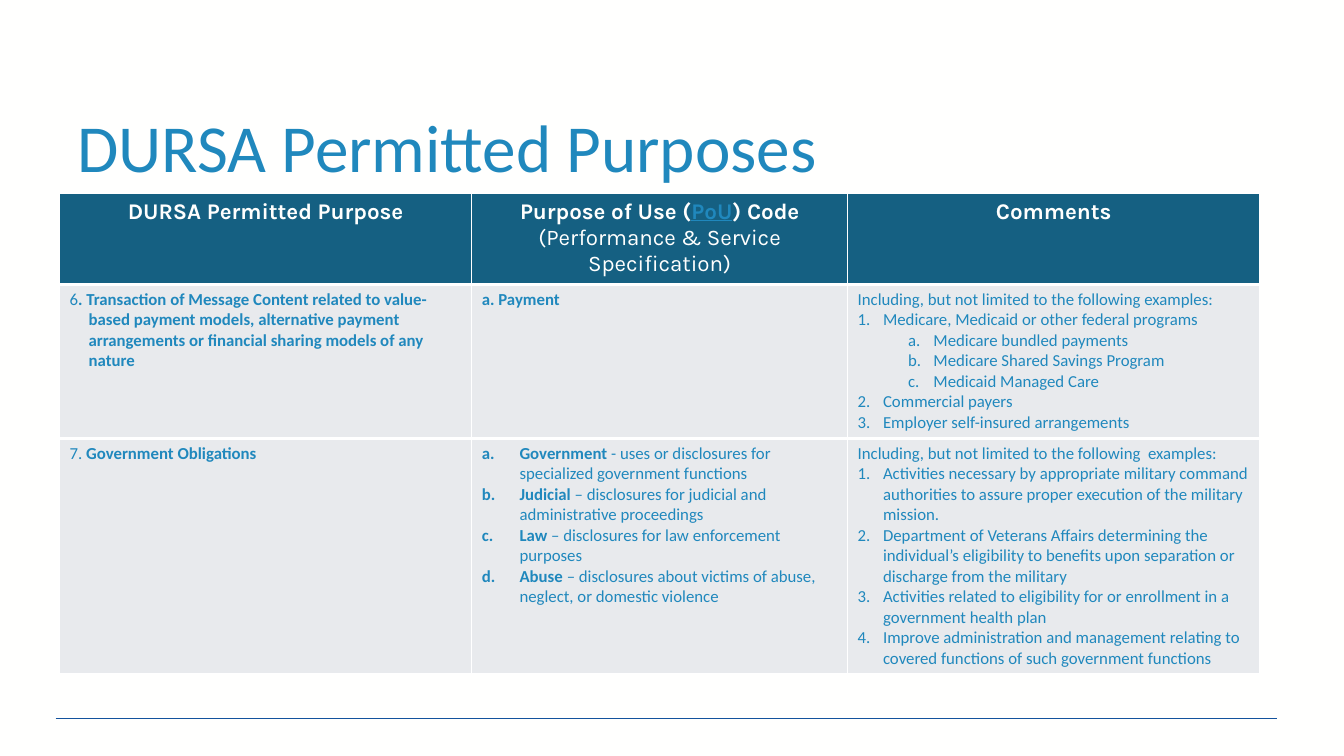
from lxml.etree import SubElement
from pptx import Presentation
from pptx.dml.color import RGBColor
from pptx.enum.shapes import MSO_CONNECTOR
from pptx.enum.text import MSO_ANCHOR, PP_ALIGN
from pptx.oxml.ns import qn
from pptx.util import Cm, Pt

BACKGROUND = RGBColor(0xFF, 0xFF, 0xFE)
BLUE = RGBColor(0x20, 0x88, 0xBD)
RULE_BLUE = RGBColor(0x13, 0x52, 0x9D)
HEADER_FILL = RGBColor(0x15, 0x60, 0x82)
BODY_FILL = RGBColor(0xE8, 0xEA, 0xED)
BORDER = RGBColor(0xFF, 0xFF, 0xFF)

COL_WIDTHS = [10.39, 9.47, 10.39]
ROW_HEIGHTS = [2.2, 3.88, 5.92]

# Paragraph styles: left margin and hanging indent in cm, level, numbering
STYLES = {
    "plain": (0, 0, 0, None),
    "hanging": (0.48, 0.48, 0, None),
    "number": (0.64, 0.64, 0, "arabicPeriod"),
    "letter": (1.91, 0.64, 1, "alphaLcPeriod"),
    "code": (0.95, 0.95, 0, "alphaLcPeriod"),
}

# Header cells: runs of (text, bold, colour, underlined)
HEADERS = [
    [("DURSA Permitted Purpose", True, BACKGROUND, False)],
    [("Purpose of Use (", True, BACKGROUND, False),
     ("PoU", True, BLUE, True),
     (") Code ", True, BACKGROUND, False),
     ("(Performance & Service Specification)", False, BACKGROUND, False)],
    [("Comments", True, BACKGROUND, False)],
]

# Body cells: paragraphs of (style, [(text, bold), ...])
BODY = [
    [
        [("hanging", [("6", False),
                      (". Transaction of Message Content related to value-based payment "
                       "models, alternative payment arrangements or financial sharing "
                       "models of any nature", True)])],
        [("plain", [("a. Payment", True)])],
        [("plain", [("Including, but not limited to the following examples:", False)]),
         ("number", [("Medicare, Medicaid or other federal programs", False)]),
         ("letter", [("Medicare bundled payments", False)]),
         ("letter", [("Medicare Shared Savings Program", False)]),
         ("letter", [("Medicaid Managed Care", False)]),
         ("number", [("Commercial payers", False)]),
         ("number", [("Employer self-insured arrangements", False)])],
    ],
    [
        [("plain", [("7. ", False), ("Government Obligations", True)])],
        [("code", [("Government", True),
                   (" - uses or disclosures for specialized government functions", False)]),
         ("code", [("Judicial ", True),
                   ("– disclosures for judicial and administrative proceedings", False)]),
         ("code", [("Law ", True),
                   ("– disclosures for law enforcement purposes", False)]),
         ("code", [("Abuse ", True),
                   ("– disclosures about victims of abuse, neglect, or domestic violence",
                    False)])],
        [("plain", [("Including, but not limited to the following  examples:", False)]),
         ("number", [("Activities necessary by appropriate military command authorities "
                      "to assure proper execution of the military mission.", False)]),
         ("number", [("Department of Veterans Affairs determining the individual’s "
                      "eligibility to benefits upon separation or discharge from the "
                      "military", False)]),
         ("number", [("Activities related to eligibility for or enrollment in a "
                      "government health plan", False)]),
         ("number", [("Improve administration and management relating to covered "
                      "functions of such government functions", False)])],
    ],
]


def add_run(p, text, font, size, color, bold=False, underline=False):
    r = p.add_run()
    r.text = text
    r.font.name = font
    r.font.size = Pt(size)
    r.font.bold = bold
    r.font.underline = underline
    r.font.color.rgb = color


def set_style(p, style):
    """Apply margin, hanging indent, level and numbering to a paragraph."""
    margin, hang, level, numbering = STYLES[style]
    p.level = level
    pPr = p._p.get_or_add_pPr()
    pPr.set("marL", str(Cm(margin)))
    pPr.set("indent", str(-Cm(hang)))
    if numbering:
        SubElement(pPr, qn("a:buFont"), typeface="+mj-lt")
        SubElement(pPr, qn("a:buAutoNum"), type=numbering)


def format_cell(cell, fill, top, bottom):
    """Set the cell fill and white borders; top and bottom are widths in points."""
    tcPr = cell._tc.get_or_add_tcPr()
    for tag, width in (("lnL", 1), ("lnR", 1), ("lnT", top), ("lnB", bottom)):
        ln = SubElement(tcPr, qn(f"a:{tag}"), w=str(Pt(width)))
        SubElement(SubElement(ln, qn("a:solidFill")), qn("a:srgbClr"), val=str(BORDER))
    cell.fill.solid()
    cell.fill.fore_color.rgb = fill


def add_title(s, left, top, width, height):
    tf = s.shapes.add_textbox(left, top, width, height).text_frame
    tf.word_wrap = True
    tf.vertical_anchor = MSO_ANCHOR.BOTTOM
    p = tf.paragraphs[0]
    p.line_spacing = 0.9
    add_run(p, "DURSA Permitted Purposes", "Calibri", 48, BLUE)


def add_purpose_table(s, left, top, width, height):
    table = s.shapes.add_table(len(ROW_HEIGHTS), len(COL_WIDTHS),
                               left, top, width, height).table
    table.horz_banding = False
    for col, share in zip(table.columns, COL_WIDTHS):
        col.width = int(width * share / sum(COL_WIDTHS))
    for row, share in zip(table.rows, ROW_HEIGHTS):
        row.height = int(height * share / sum(ROW_HEIGHTS))

    for c, runs in enumerate(HEADERS):
        cell = table.cell(0, c)
        format_cell(cell, HEADER_FILL, 1, 3)
        p = cell.text_frame.paragraphs[0]
        p.alignment = PP_ALIGN.CENTER
        for text, bold, color, underline in runs:
            add_run(p, text, "Karla", 16, color, bold, underline)

    for r, row in enumerate(BODY, 1):
        for c, paragraphs in enumerate(row):
            cell = table.cell(r, c)
            format_cell(cell, BODY_FILL, 3, 1 if r == len(BODY) else 3)
            tf = cell.text_frame
            for i, (style, runs) in enumerate(paragraphs):
                p = tf.add_paragraph() if i else tf.paragraphs[0]
                set_style(p, style)
                for text, bold in runs:
                    add_run(p, text, "Calibri", 12, BLUE, bold)


def add_footer_rule(s, left, top, width):
    line = s.shapes.add_connector(MSO_CONNECTOR.STRAIGHT, left, top, left + width, top)
    line.line.color.rgb = RULE_BLUE
    line.line.width = Pt(0.5)
    SubElement(line._element.spPr, qn("a:effectLst"))


def main():
    prs = Presentation()
    prs.slide_width, prs.slide_height = Cm(33.87), Cm(19.05)
    s = prs.slides.add_slide(prs.slide_layouts[6])
    s.background.fill.solid()
    s.background.fill.fore_color.rgb = BACKGROUND
    add_footer_rule(s, Cm(1.4), Cm(18.23 - 0.12), Cm(30.78))
    add_title(s, Cm(1.7), Cm(2.06), Cm(30.48), Cm(2.77))
    add_purpose_table(s, Cm(1.5), Cm(4.88), Cm(sum(COL_WIDTHS)), Cm(sum(ROW_HEIGHTS)))
    prs.save("out.pptx")


if __name__ == "__main__":
    main()
